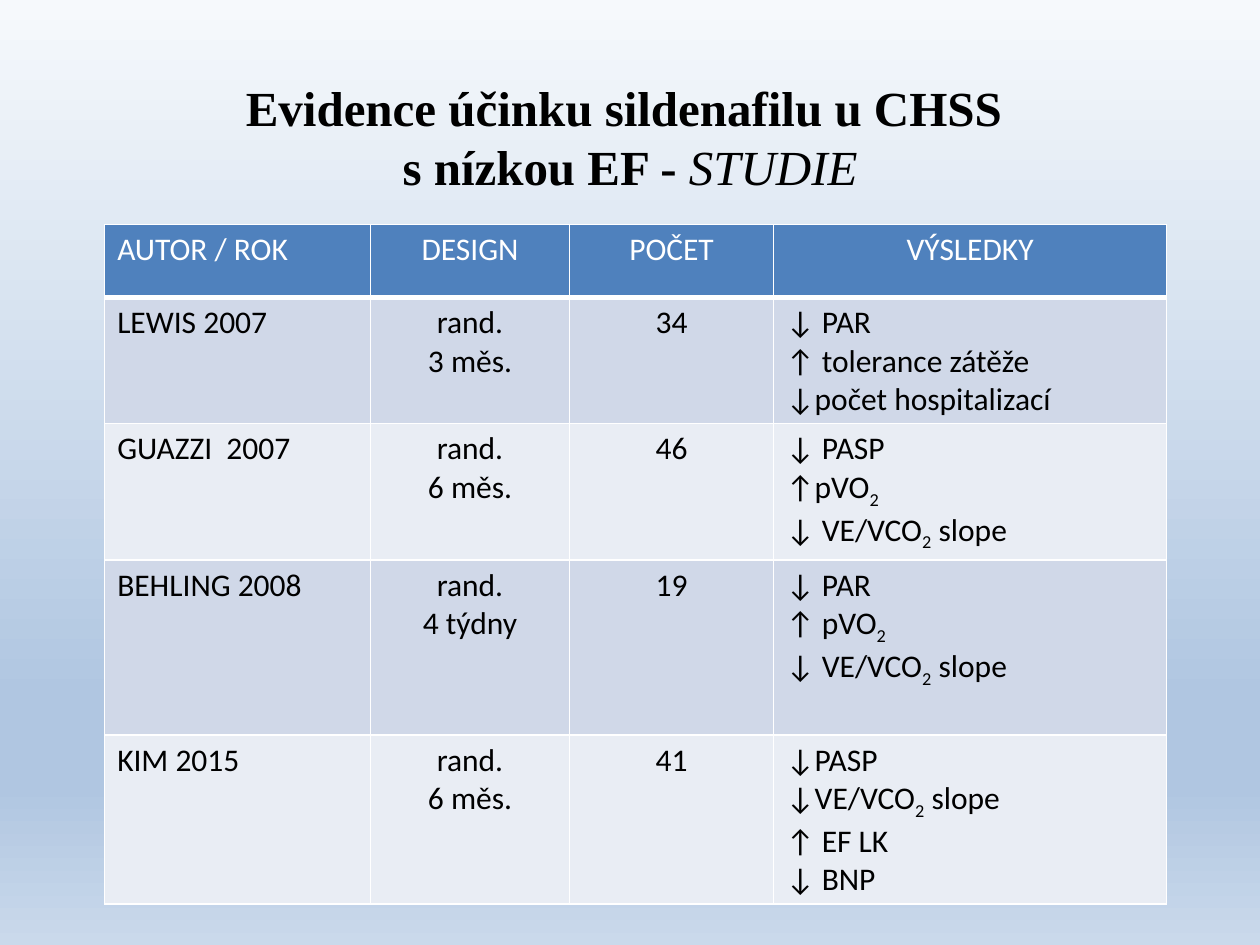
from dataclasses import dataclass

from lxml.etree import SubElement
from pptx import Presentation
from pptx.dml.color import RGBColor as RGB
from pptx.enum.text import MSO_ANCHOR as Anchor, PP_ALIGN as Align
from pptx.oxml.ns import qn
from pptx.util import Pt


@dataclass(frozen=True)
class Theme:
    title_font: str = "Times New Roman"
    body_font: str = "Calibri"
    title_size: int = 28
    body_size: int = 18
    black: str = "000000"
    white: str = "FFFFFF"
    header: str = "4F81BD"
    bands: tuple = ("D0D8E8", "E9EDF4")
    background: tuple = ((0, "F6F9FC"), (74, "B0C6E1"), (83, "B0C6E1"), (100, "CAD9EB"))


@dataclass(frozen=True)
class Study:
    author: str
    duration: str
    count: str
    results: tuple  # "_" marks the next character as a subscript
    height: float


T = Theme()
HEADINGS = ("AUTOR / ROK", "DESIGN", "POČET", "VÝSLEDKY")
HEADER_HEIGHT = 41.8
COLUMN_WIDTHS = (151.9, 113.8, 116.6, 224.6)
SLOPE = "VE/VCO_2 slope"
STUDIES = (
    Study("LEWIS 2007", "3 měs.", "34",
          ("↓ PAR", "↑ tolerance zátěže", "↓počet hospitalizací"), 69.8),
    Study("GUAZZI  2007", "6 měs.", "46", ("↓ PASP", "↑pVO_2", "↓ " + SLOPE), 69.8),
    Study("BEHLING 2008", "4 týdny", "19", ("↓ PAR", "↑ pVO_2", "↓ " + SLOPE), 100),
    Study("KIM 2015", "6 měs.", "41",
          ("↓PASP", "↓" + SLOPE, "↑ EF LK", "↓ BNP"), 90.7),
)


def add_text(p, text: str, *, font=T.body_font, size=T.body_size, color=T.black,
             bold=False, italic=False, align=None) -> None:
    """Append formatted text to a paragraph."""
    if align is not None:
        p.alignment = align
    first, *rest = text.split("_")
    pieces = [(first, False)]
    for part in rest:
        pieces += [(part[0], True), (part[1:], False)]
    for piece, subscript in pieces:
        if not piece:
            continue
        r = p.add_run()
        r.text = piece
        f = r.font
        f.name, f.size, f.bold, f.italic = font, Pt(size), bold, italic
        f.color.rgb = RGB.from_string(color)
        if subscript:
            f._element.set("baseline", "-25000")


def set_background(s) -> None:
    fill = s.background.fill
    fill.gradient()
    fill.gradient_angle = 270
    stops = next(s.element.iter(qn("a:gsLst")))
    for old in list(stops):
        stops.remove(old)
    for position, color in T.background:
        stop = SubElement(stops, qn("a:gs"), pos=str(position * 1000))
        SubElement(stop, qn("a:srgbClr"), val=color)


def add_borders(cell, bottom: float) -> None:
    tc_pr = cell._tc.get_or_add_tcPr()
    for side, width in (("L", 1), ("R", 1), ("T", 1), ("B", bottom)):
        line = SubElement(tc_pr, qn(f"a:ln{side}"), w=str(int(Pt(width))))
        fill = SubElement(line, qn("a:solidFill"))
        SubElement(fill, qn("a:srgbClr"), val=T.white)


def fill_cell(cell, lines: tuple, *, fill: str, color=T.black, align=None, bottom=1) -> None:
    add_borders(cell, bottom)
    cell.fill.solid()
    cell.fill.fore_color.rgb = RGB.from_string(fill)
    tf = cell.text_frame
    for i, line in enumerate(lines):
        p = tf.add_paragraph() if i else tf.paragraphs[0]
        add_text(p, line, color=color, align=align)


def add_title(s) -> None:
    tf = s.shapes.add_textbox(Pt(36), Pt(21.6), Pt(648), Pt(112.3)).text_frame
    tf.word_wrap = True
    tf.vertical_anchor = Anchor.MIDDLE
    p = tf.paragraphs[0]
    style = dict(font=T.title_font, size=T.title_size, align=Align.CENTER)
    add_text(p, "Evidence účinku sildenafilu u CHSS ", bold=True, **style)
    p.add_line_break()
    add_text(p, "s nízkou EF - ", bold=True, **style)
    add_text(p, "STUDIE", italic=True, **style)


def add_studies(s) -> None:
    heights = [HEADER_HEIGHT] + [study.height for study in STUDIES]
    table = s.shapes.add_table(len(heights), len(HEADINGS), Pt(59.8), Pt(128.2),
                               Pt(sum(COLUMN_WIDTHS)), Pt(sum(heights))).table
    for column, width in zip(table.columns, COLUMN_WIDTHS):
        column.width = Pt(width)
    for row, height in zip(table.rows, heights):
        row.height = Pt(height)

    # Header row
    for c, heading in enumerate(HEADINGS):
        fill_cell(table.cell(0, c), (heading,), fill=T.header, color=T.white,
                  align=Align.CENTER if c else None, bottom=3)

    # One banded row per study
    for i, study in enumerate(STUDIES):
        columns = ((study.author,), ("rand.", study.duration), (study.count,), study.results)
        for c, lines in enumerate(columns):
            fill_cell(table.cell(i + 1, c), lines, fill=T.bands[i % 2],
                      align=Align.CENTER if c in (1, 2) else None)


def main() -> None:
    prs = Presentation()
    prs.slide_width, prs.slide_height = Pt(720), Pt(540)
    s = prs.slides.add_slide(prs.slide_layouts[6])
    set_background(s)
    add_title(s)
    add_studies(s)
    prs.save("out.pptx")


if __name__ == "__main__":
    main()
